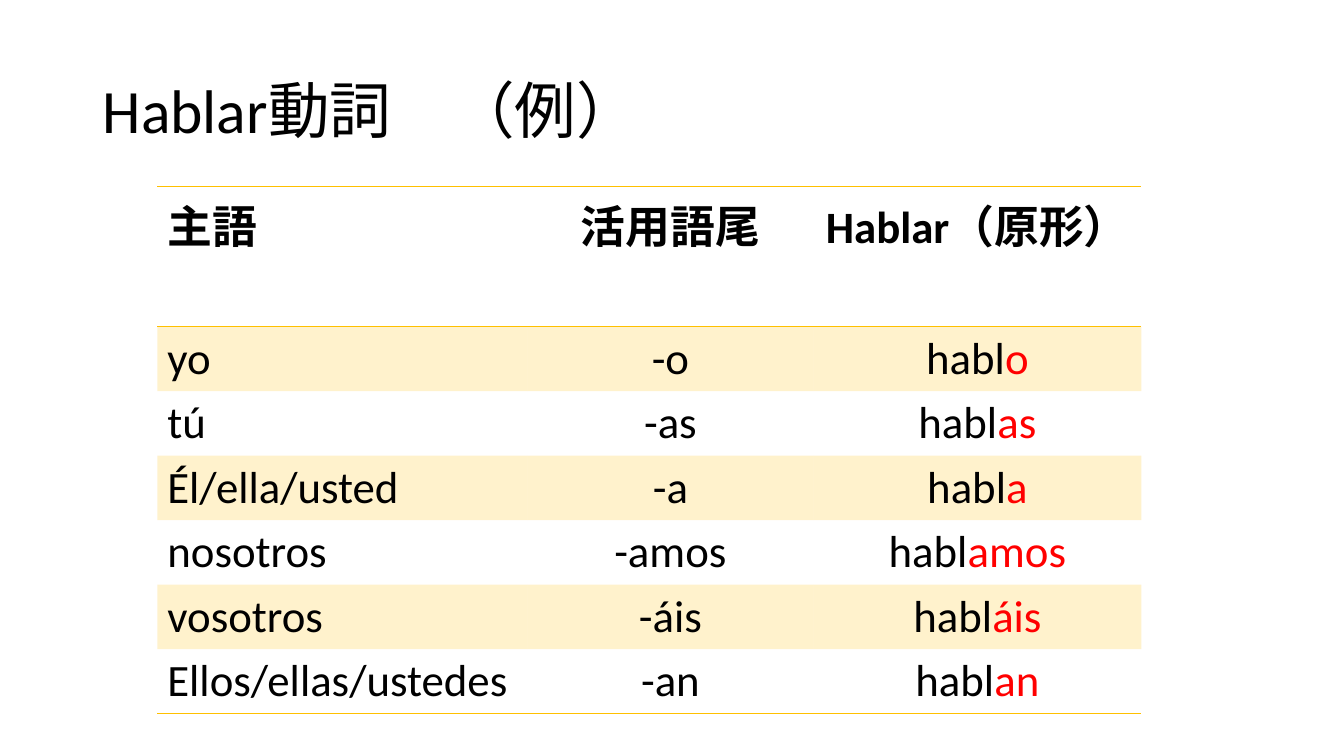
"""Build a slide that conjugates the Spanish verb hablar."""
import lxml.etree
import pptx
import pptx.dml.color
import pptx.enum.lang
import pptx.enum.text
import pptx.oxml
import pptx.oxml.ns
import pptx.util

EMU_PER_PX = 9144
ALIGN = pptx.enum.text.PP_ALIGN
THEME = {
    "font": "Calibri",
    "ink": "000000",
    "ending": "FF0000",
    "gold": "FFC000",
    "band_alpha": 20,
    "rule_pt": 1,
    "title_pt": 44,
    "table_pt": 32,
    "table_style": "{2D5ABB26-0587-4C30-8999-92F81FD0307C}",
}
COLUMN_WIDTHS = [367, 284, 325]
COLUMN_ALIGNS = [ALIGN.JUSTIFY, ALIGN.CENTER, ALIGN.CENTER]
HEADING_HEIGHT = 139
VERB_HEIGHT = 64
HEADINGS = ["主語", "活用語尾", "Hablar（原形）"]
STEM = "habl"
ENDINGS = [
    ("yo", "o"),
    ("tú", "as"),
    ("Él/ella/usted", "a"),
    ("nosotros", "amos"),
    ("vosotros", "áis"),
    ("Ellos/ellas/ustedes", "an"),
]


def px(length):
    """Convert whole pixels to EMU."""
    return pptx.util.Emu(length * EMU_PER_PX)


def apply_format(target, values):
    """Set each named format value on the target."""
    for name, value in values.items():
        setattr(target, name, value)


def write_runs(paragraph, runs, size, bold=False):
    """Write (wording, colour) pairs as runs of one paragraph."""
    for wording, colour in runs:
        run = paragraph.add_run()
        run.text = wording
        apply_format(run.font, {
            "name": THEME["font"],
            "size": pptx.util.Pt(size),
            "bold": bold,
            "language_id": pptx.enum.lang.MSO_LANGUAGE_ID.JAPANESE,
        })
        run.font.color.rgb = pptx.dml.color.RGBColor.from_string(colour)


def add_title(slide, wording):
    """Add the slide title."""
    title = slide.shapes.add_textbox(px(92), px(40), px(1150), px(145))
    apply_format(title.text_frame, {
        "word_wrap": True,
        "vertical_anchor": pptx.enum.text.MSO_ANCHOR.MIDDLE,
    })
    heading = title.text_frame.paragraphs[0]
    heading.line_spacing = 0.9
    write_runs(heading, [(wording, THEME["ink"])], THEME["title_pt"])


def add_rule(cell, side):
    """Draw a gold rule on one side of a cell, lnT or lnB."""
    rule = lxml.etree.SubElement(
        cell._tc.get_or_add_tcPr(), pptx.oxml.ns.qn(f"a:{side}"),
        w=str(pptx.util.Pt(THEME["rule_pt"])))
    paint = lxml.etree.SubElement(rule, pptx.oxml.ns.qn("a:solidFill"))
    lxml.etree.SubElement(paint, pptx.oxml.ns.qn("a:srgbClr"), val=THEME["gold"])


def fill_cell(cell, banded):
    """Give a cell a translucent gold band or no fill."""
    if not banded:
        cell.fill.background()
        return
    cell.fill.solid()
    cell.fill.fore_color.rgb = pptx.dml.color.RGBColor.from_string(THEME["gold"])
    gold = cell._tc.tcPr.find(".//" + pptx.oxml.ns.qn("a:srgbClr"))
    lxml.etree.SubElement(gold, pptx.oxml.ns.qn("a:alpha"),
                          val=str(THEME["band_alpha"] * 1000))


def conjugation_rows():
    """Return the runs of every table cell, row by row."""
    ink = THEME["ink"]
    rows = [[[(heading, ink)] for heading in HEADINGS]]
    for subject, ending in ENDINGS:
        rows.append([
            [(subject, ink)],
            [(f"-{ending}", ink)],
            [(STEM, ink), (ending, THEME["ending"])],
        ])
    return rows


def add_conjugation_table(slide, rows):
    """Add the table of subjects, endings and verb forms."""
    heights = [HEADING_HEIGHT] + [VERB_HEIGHT] * len(ENDINGS)
    table = slide.shapes.add_table(
        len(rows), len(COLUMN_WIDTHS), px(156), px(185),
        px(sum(COLUMN_WIDTHS)), px(sum(heights))).table
    table._tbl.tblPr.find(pptx.oxml.ns.qn("a:tableStyleId")).text = THEME["table_style"]
    apply_format(table, {"first_row": False, "horz_banding": False})
    for column, width in zip(table.columns, COLUMN_WIDTHS):
        column.width = px(width)
    rules = {0: ["lnT", "lnB"], len(rows) - 1: ["lnB"]}
    for row_index, row in enumerate(rows):
        table.rows[row_index].height = px(heights[row_index])
        for column_index, runs in enumerate(row):
            cell = table.cell(row_index, column_index)
            for side in rules.get(row_index, []):
                add_rule(cell, side)
            fill_cell(cell, row_index % 2 == 1)
            paragraph = cell.text_frame.paragraphs[0]
            paragraph.alignment = COLUMN_ALIGNS[column_index]
            write_runs(paragraph, runs, THEME["table_pt"], bold=row_index == 0)


def main():
    """Build and save the presentation."""
    presentation = pptx.Presentation()
    apply_format(presentation, {"slide_width": px(1333), "slide_height": px(750)})
    slide = presentation.slides.add_slide(presentation.slide_layouts[6])
    add_title(slide, "Hablar動詞　（例）")
    add_conjugation_table(slide, conjugation_rows())
    presentation.save("out.pptx")


if __name__ == "__main__":
    main()
